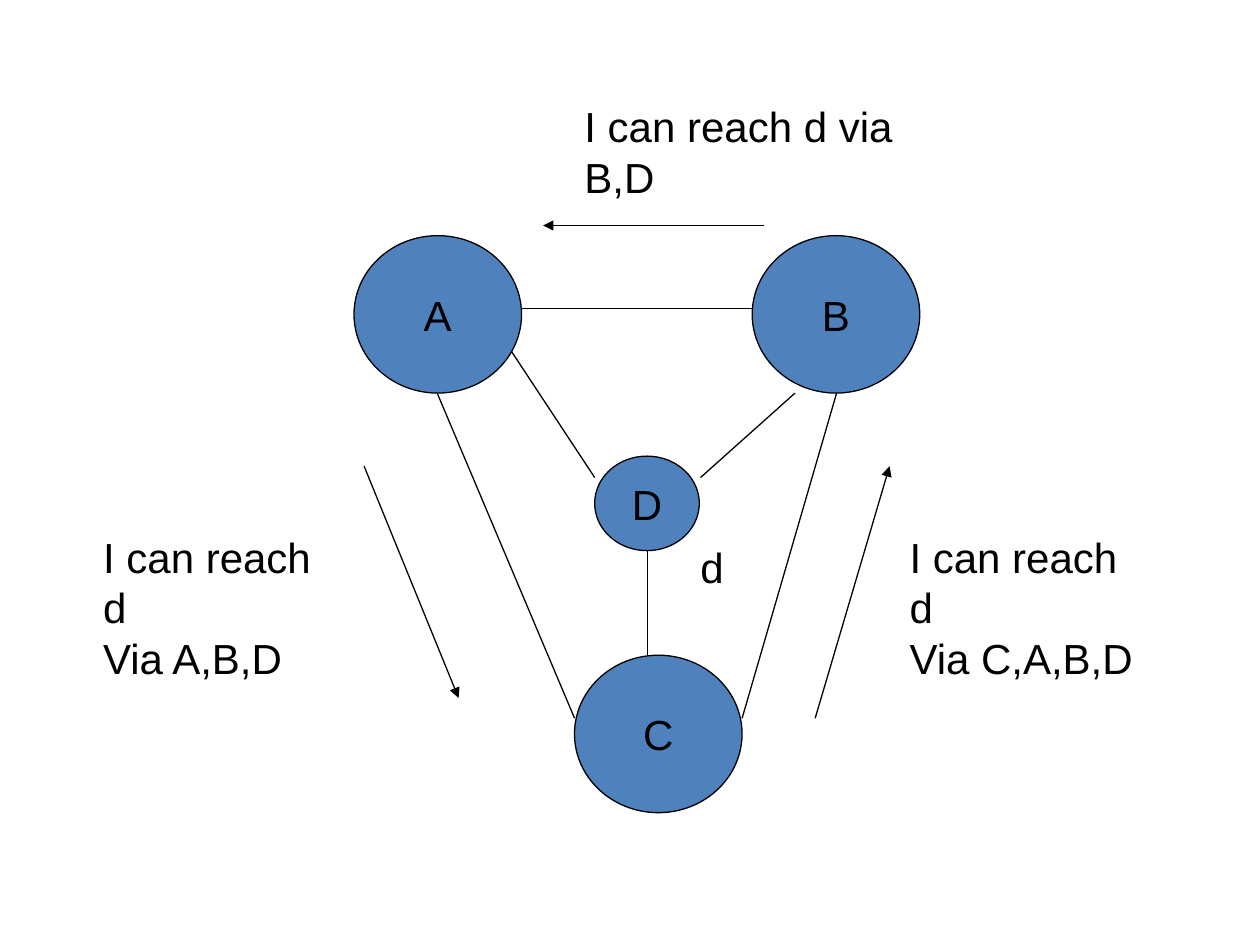
from lxml.etree import SubElement
from pptx import Presentation
from pptx.dml.color import RGBColor
from pptx.enum.shapes import MSO_CONNECTOR, MSO_SHAPE
from pptx.enum.text import MSO_ANCHOR, MSO_AUTO_SIZE, PP_ALIGN
from pptx.oxml.ns import qn
from pptx.util import Inches, Pt

BLUE = RGBColor(0x4F, 0x81, 0xBD)
BLACK = RGBColor(0x00, 0x00, 0x00)
LINE_WIDTH = Pt(0.75)
FONT = {"name": "Arial", "size": Pt(24)}

# label: left, top, width, height
ROUTERS = {
    "A": (2.81, 1.87, 1.33, 1.25),
    "B": (5.97, 1.87, 1.33, 1.25),
    "C": (4.56, 5.2, 1.33, 1.25),
    "D": (4.72, 3.62, 0.83, 0.75),
}
# from x, from y, to x, to y
LINKS = [
    (4.14, 2.45, 5.97, 2.45),
    (3.47, 3.12, 4.56, 5.7),
    (6.64, 3.12, 5.89, 5.7),
    (4.06, 2.79, 4.72, 3.79),
    (6.31, 3.12, 5.56, 3.79),
    (5.14, 4.37, 5.14, 5.2),
]
ADVERTISEMENTS = [
    ((6.06, 1.79, 4.31, 1.79), "I can reach d via B,D", (4.54, 0.75, 3.29, 0.5)),
    ((2.89, 3.7, 3.64, 5.54), "I can reach d\nVia A,B,D", (0.72, 4.17, 2.12, 0.9)),
    ((6.47, 5.7, 7.06, 3.7), "I can reach d\nVia C,A,B,D", (7.12, 4.17, 2.12, 0.9)),
]


def inches(values):
    return [Inches(v) for v in values]


def write_text(tf, text, align):
    tf.word_wrap = False
    tf.text = text
    for p in tf.paragraphs:
        p.alignment = align
        for name, value in FONT.items():
            setattr(p.font, name, value)
        p.font.color.rgb = BLACK


def add_router(s, label, box):
    sp = s.shapes.add_shape(MSO_SHAPE.OVAL, *inches(box))
    sp.shadow.inherit = False
    sp.fill.solid()
    sp.fill.fore_color.rgb = BLUE
    sp.line.color.rgb = BLACK
    sp.line.width = LINE_WIDTH
    sp.text_frame.vertical_anchor = MSO_ANCHOR.MIDDLE
    write_text(sp.text_frame, label, PP_ALIGN.CENTER)


def add_line(s, ends, arrow=False):
    line = s.shapes.add_connector(MSO_CONNECTOR.STRAIGHT, *inches(ends))
    line.line.color.rgb = BLACK
    line.line.width = LINE_WIDTH
    if arrow:
        SubElement(line.line._get_or_add_ln(), qn("a:tailEnd"), type="triangle")
    SubElement(line._element.spPr, qn("a:effectLst"))


def add_label(s, text, box):
    tf = s.shapes.add_textbox(*inches(box)).text_frame
    tf.auto_size = MSO_AUTO_SIZE.SHAPE_TO_FIT_TEXT
    write_text(tf, text, PP_ALIGN.LEFT)


def add_network(s):
    for label, box in ROUTERS.items():
        add_router(s, label, box)
    for ends in LINKS:
        add_line(s, ends)
    add_label(s, "d", (5.46, 4.25, 0.38, 0.5))


def add_advertisements(s):
    for ends, text, box in ADVERTISEMENTS:
        add_line(s, ends, arrow=True)
        add_label(s, text, box)


def main():
    prs = Presentation()
    prs.slide_width, prs.slide_height = Inches(10), Inches(7.5)
    s = prs.slides.add_slide(prs.slide_layouts[6])
    add_network(s)
    add_advertisements(s)
    prs.save("out.pptx")


if __name__ == "__main__":
    main()
